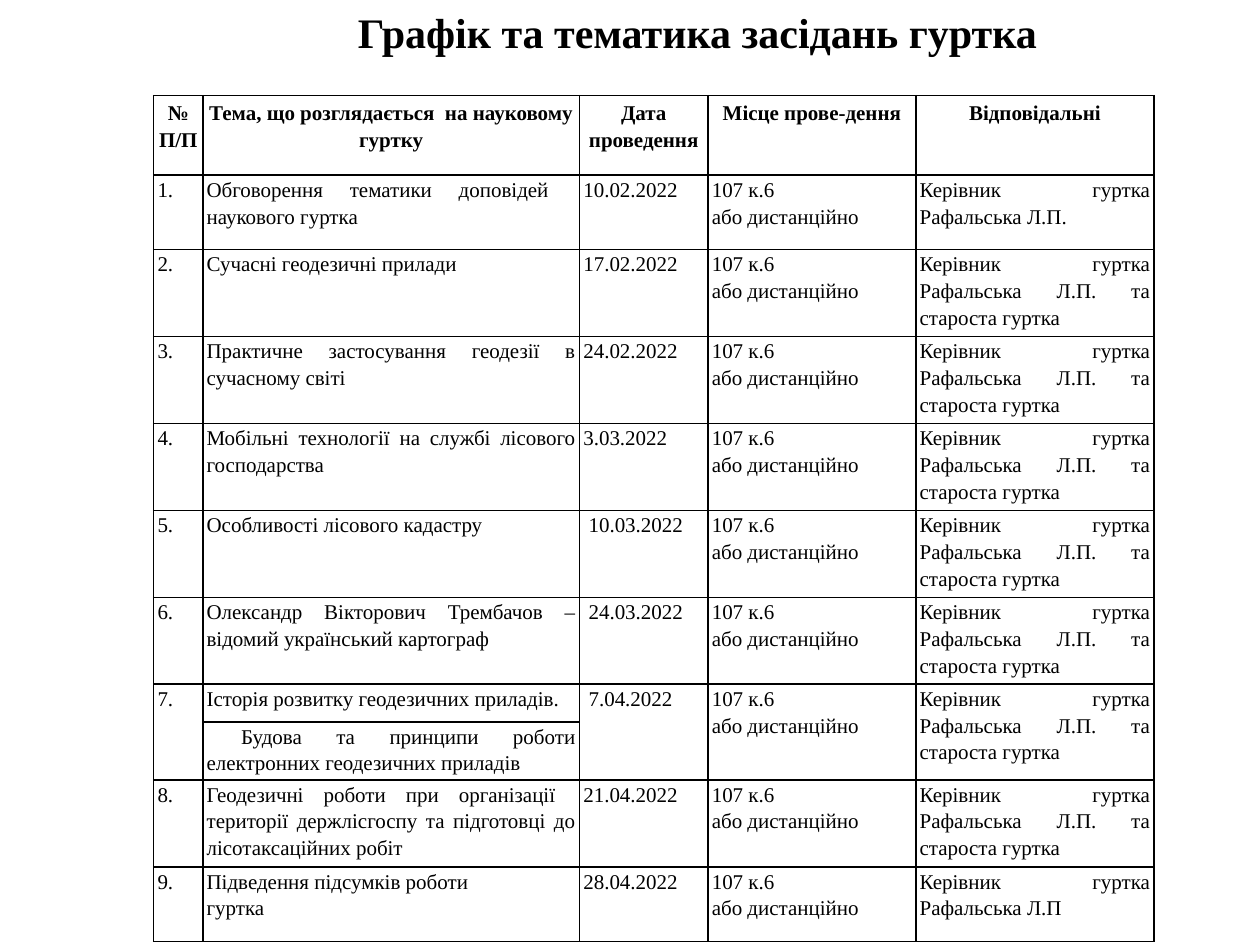
from lxml.etree import SubElement
from pptx import Presentation
from pptx.dml.color import RGBColor
from pptx.enum.text import MSO_ANCHOR, MSO_AUTO_SIZE as AutoSize, PP_ALIGN as Align
from pptx.oxml.ns import qn
from pptx.util import Inches, Pt

COLORS = {"text": "000000", "border": "000000"}
GRID_COLS, GRID_ROWS = 100, 75

HEADERS = ["№\nП/П", "Тема, що розглядається  на науковому гуртку",
           "Дата проведення", "Місце прове-дення", "Відповідальні"]
PLACE = "107 к.6\nабо дистанційно"
LEADER = "Керівник гуртка Рафальська Л.П."
BOTH = LEADER + " та староста гуртка"
MEETINGS = [
    ("Обговорення тематики доповідей  наукового гуртка", "10.02.2022", LEADER),
    ("Сучасні геодезичні прилади", "17.02.2022", BOTH),
    ("Практичне застосування геодезії в сучасному світі", "24.02.2022", BOTH),
    ("Мобільні технології на службі лісового господарства", "3.03.2022", BOTH),
    ("Особливості лісового кадастру", " 10.03.2022", BOTH),
    ("Олександр Вікторович Трембачов – відомий український картограф", " 24.03.2022", BOTH),
    ("Історія розвитку геодезичних приладів.", " 7.04.2022", BOTH),
    ("Геодезичні роботи при організації  території держлісгоспу та підготовці "
     "до лісотаксаційних робіт", "21.04.2022", BOTH),
    ("Підведення підсумків роботи\nгуртка", "28.04.2022", LEADER.rstrip(".")),
]
SPLIT_ROW = 7
SECOND_TOPIC = " Будова та принципи роботи електронних геодезичних приладів"
COL_WIDTHS = [3.9, 29.9, 10.2, 16.5, 18.9]
ROW_HEIGHTS = [6.3] + [5.9] * 6 + [3, 3.2] + [5.9] * 2


class Deck:
    """Holds the style and the current slide; lengths are in grid columns and rows."""

    def __init__(self):
        self.prs = Presentation()
        self.prs.slide_width, self.prs.slide_height = Inches(10), Inches(7.5)
        self.font = {"name": "Times New Roman", "size": Pt(12), "bold": False}
        self.s = self.prs.slides.add_slide(self.prs.slide_layouts[5])

    def x(self, cols):
        return round(self.prs.slide_width * cols / GRID_COLS)

    def y(self, rows):
        return round(self.prs.slide_height * rows / GRID_ROWS)

    def add_text(self, tf, text, align, spacing=1.0, **font):
        for i, line in enumerate(text.split("\n")):
            p = tf.add_paragraph() if i else tf.paragraphs[0]
            p.alignment, p.line_spacing = align, spacing
            r = p.add_run()
            r.text = line
            for key, value in {**self.font, **font}.items():
                setattr(r.font, key, value)
            r.font.color.rgb = RGBColor.from_string(COLORS["text"])

    def title(self, text, left, top, width, height):
        sp = self.s.shapes.title
        sp.left, sp.top = self.x(left), self.y(top)
        sp.width, sp.height = self.x(width), self.y(height)
        tf = sp.text_frame
        tf.word_wrap, tf.auto_size = True, AutoSize.SHAPE_TO_FIT_TEXT
        tf.vertical_anchor = MSO_ANCHOR.TOP
        self.add_text(tf, text, Align.CENTER, size=Pt(24), bold=True)

    def border(self, cell):
        tc_pr = cell._tc.get_or_add_tcPr()
        for side in ("lnL", "lnR", "lnT", "lnB"):
            line = SubElement(tc_pr, qn(f"a:{side}"), w=str(Pt(1)))
            fill = SubElement(line, qn("a:solidFill"))
            SubElement(fill, qn("a:srgbClr"), val=COLORS["border"])

    def cell(self, cell, text, header):
        cell.margin_left = cell.margin_right = Inches(0.03)
        cell.margin_top = cell.margin_bottom = Inches(0.02 if header else 0)
        self.border(cell)
        cell.fill.background()
        if text:
            self.add_text(cell.text_frame, text, Align.CENTER if header else Align.JUSTIFY,
                          spacing=1.15, bold=header)

    def table(self, rows, left, top, width, height):
        frame = self.s.shapes.add_table(len(rows), len(rows[0]), self.x(left),
                                        self.y(top), self.x(width), self.y(height))
        table = frame.table
        table.first_row = table.horz_banding = False
        for column, cols in zip(table.columns, COL_WIDTHS):
            column.width = self.x(cols)
        for row, units in zip(table.rows, ROW_HEIGHTS):
            row.height = self.y(units)
        frame.height = self.y(height)
        for i, texts in enumerate(rows):
            for j, text in enumerate(texts):
                self.cell(table.cell(i, j), text, header=i == 0)
        return table


def main():
    deck = Deck()
    deck.title("Графік та тематика засідань гуртка", 13.5, 0, 83.7, 5)
    rows = [HEADERS] + [[f"{n}.", topic, date, PLACE, people]
                        for n, (topic, date, people) in enumerate(MEETINGS, 1)]
    rows.insert(SPLIT_ROW + 1, ["", SECOND_TOPIC, "", "", ""])
    table = deck.table(rows, 12.2, 7.6, 79.5, 67.4)
    for col in (0, 2, 3, 4):
        table.cell(SPLIT_ROW, col).merge(table.cell(SPLIT_ROW + 1, col))
    deck.prs.save("out.pptx")


if __name__ == "__main__":
    main()
